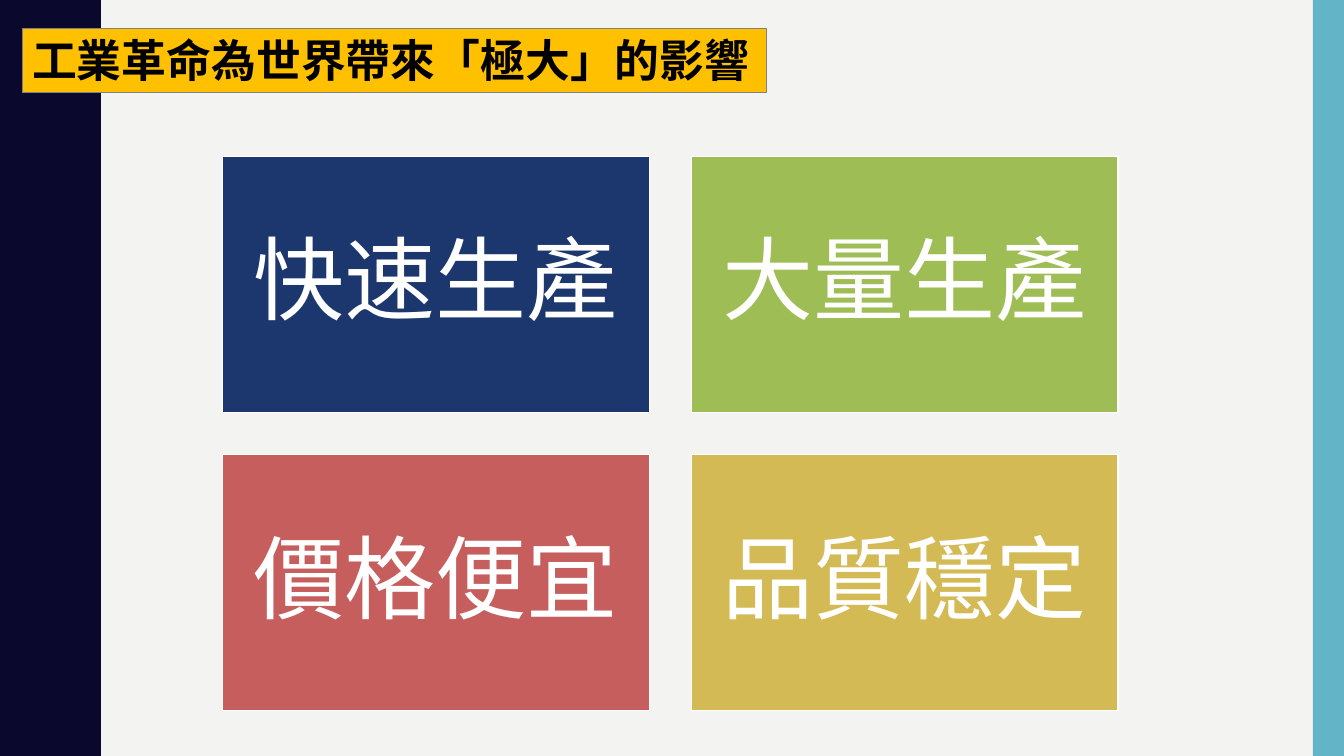
import pptx
import pptx.dml.color
import pptx.enum.shapes
import pptx.enum.text
import pptx.util

Inches = pptx.util.Inches
Pt = pptx.util.Pt
RGBColor = pptx.dml.color.RGBColor

PAPER = RGBColor(0xF3, 0xF3, 0xF2)
NIGHT = RGBColor(0x0B, 0x08, 0x2E)
TEAL = RGBColor(0x62, 0xB4, 0xC6)
AMBER = RGBColor(0xFF, 0xC0, 0x00)
GRAY = RGBColor(0x80, 0x80, 0x80)
NAVY = RGBColor(0x1B, 0x37, 0x6E)
GREEN = RGBColor(0x9E, 0xBE, 0x55)
RED = RGBColor(0xC6, 0x5E, 0x5E)
GOLD = RGBColor(0xD3, 0xBA, 0x55)
WHITE = RGBColor(0xFF, 0xFF, 0xFF)
BLACK = RGBColor(0x00, 0x00, 0x00)

WIDTH, HEIGHT = 13.33, 7.5

# One half wave of the left band, from trough to crest
HALF_WAVE = [(0.78, 0), (0.78, 0.07), (0.79, 0.14), (0.8, 0.2), (0.81, 0.25),
             (0.83, 0.29), (0.85, 0.33), (0.87, 0.38), (0.89, 0.42),
             (0.91, 0.46), (0.93, 0.5), (0.95, 0.55), (0.96, 0.61),
             (0.97, 0.68), (0.97, 0.75)]
WAVE_LENGTH = 1.5
WAVE_COUNT = 5

CARDS = [("快速生產", NAVY), ("大量生產", GREEN),
         ("價格便宜", RED), ("品質穩定", GOLD)]
CARD_LEFT, CARD_TOP = 2.21, 1.55
CARD_WIDTH, CARD_HEIGHT = 4.23, 2.54
CARD_GAP = 0.42


class SlideBuilder:
    title_font = "Arial"
    card_font = "Calibri"

    def __init__(self, slide):
        self.slide = slide
        fill = slide.background.fill
        fill.solid()
        fill.fore_color.rgb = PAPER

    def paint(self, sp, color, line=None, line_width=1):
        sp.fill.solid()
        sp.fill.fore_color.rgb = color
        if line is None:
            sp.line.fill.background()
        else:
            sp.line.color.rgb = line
            sp.line.width = Pt(line_width)

    def set_text(self, sp, text, font, size, color, bold=False):
        p = sp.text_frame.paragraphs[0]
        p.text = text
        r = p.runs[0]
        r.font.name = font
        r.font.size = Pt(size)
        r.font.color.rgb = color
        r.font.bold = bold
        return p

    def rect(self, left, top, width, height, color, line=None):
        sp = self.slide.shapes.add_shape(
            pptx.enum.shapes.MSO_SHAPE.RECTANGLE,
            Inches(left), Inches(top), Inches(width), Inches(height))
        sp.shadow.inherit = False
        self.paint(sp, color, line)
        return sp

    def wavy_band(self, color):
        """Draw the left band, repeating the half wave and its mirror down the slide."""
        wave = HALF_WAVE + [(x, WAVE_LENGTH - y) for x, y in HALF_WAVE[-2::-1]]
        edge = [(x, y + i * WAVE_LENGTH)
                for i in range(WAVE_COUNT) for x, y in wave]
        builder = self.slide.shapes.build_freeform(0, 0, scale=Inches(1))
        builder.add_line_segments(edge + [(0, HEIGHT)], close=True)
        sp = builder.convert_to_shape()
        sp.shadow.inherit = False
        self.paint(sp, color)

    def title(self, text):
        sp = self.slide.shapes.add_textbox(
            Inches(0.22), Inches(0.28), Inches(7.38), Inches(0.64))
        self.paint(sp, AMBER, GRAY, 0.75)
        sp.text_frame.word_wrap = False
        sp.text_frame.auto_size = pptx.enum.text.MSO_AUTO_SIZE.SHAPE_TO_FIT_TEXT
        self.set_text(sp, text, self.title_font, 32, BLACK, bold=True)

    def card(self, left, top, text, color):
        sp = self.rect(left, top, CARD_WIDTH, CARD_HEIGHT, color, WHITE)
        tf = sp.text_frame
        tf.word_wrap = True
        tf.vertical_anchor = pptx.enum.text.MSO_ANCHOR.MIDDLE
        tf.margin_left = tf.margin_right = Inches(0.27)
        tf.margin_top = tf.margin_bottom = Inches(0.27)
        p = self.set_text(sp, text, self.card_font, 65, WHITE)
        p.alignment = pptx.enum.text.PP_ALIGN.CENTER
        p.line_spacing = 0.9


def main():
    prs = pptx.Presentation()
    prs.slide_width = Inches(WIDTH)
    prs.slide_height = Inches(HEIGHT)
    s = SlideBuilder(prs.slides.add_slide(prs.slide_layouts[6]))

    s.wavy_band(NIGHT)
    s.rect(13.02, 0, 0.31, HEIGHT, TEAL)
    s.title("工業革命為世界帶來「極大」的影響")
    for i, (text, color) in enumerate(CARDS):
        row, col = divmod(i, 2)
        s.card(CARD_LEFT + col * (CARD_WIDTH + CARD_GAP),
               CARD_TOP + row * (CARD_HEIGHT + CARD_GAP), text, color)

    prs.save("out.pptx")


if __name__ == "__main__":
    main()
